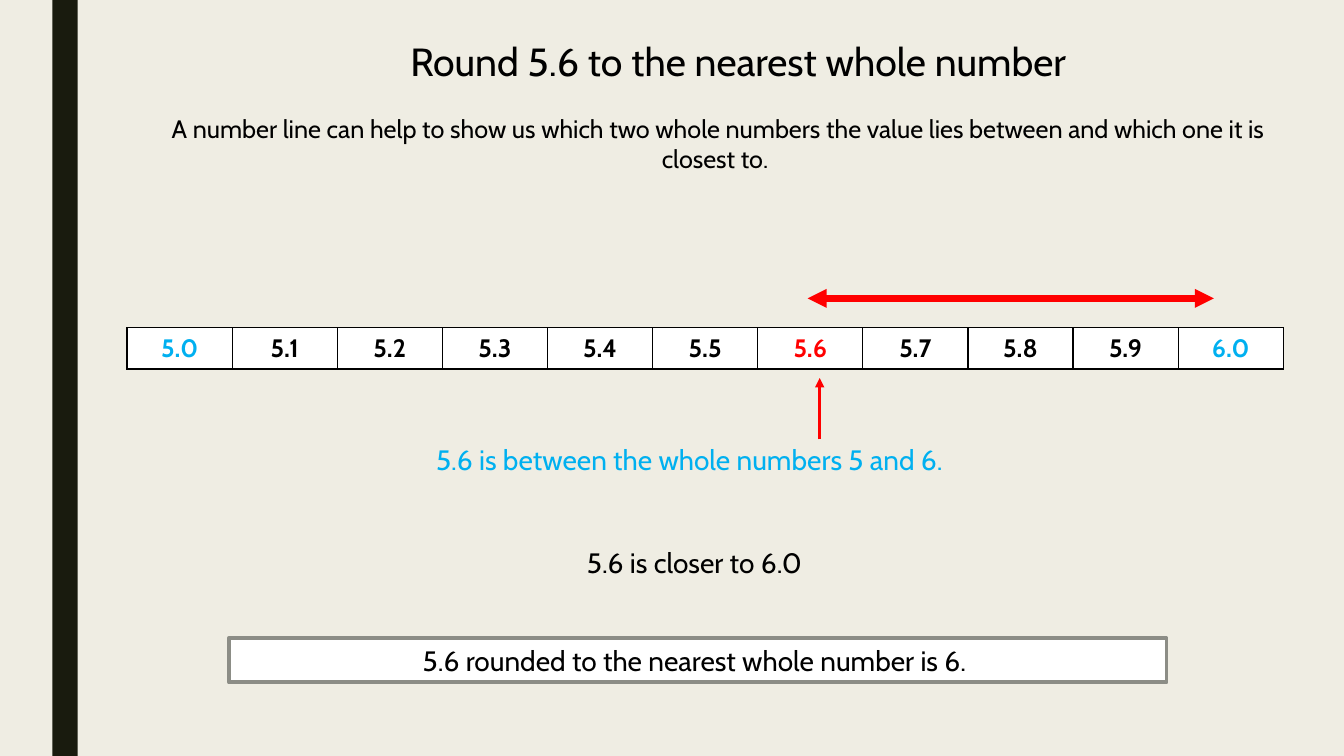
import pptx
import pptx.util
import pptx.dml.color
import pptx.enum.shapes
import pptx.enum.text
import pptx.oxml
import pptx.oxml.ns
import lxml.etree

Inches = pptx.util.Inches
Pt = pptx.util.Pt
FONT = "Cabin"
BLACK, BLUE, RED, WHITE = "000000", "00B0F0", "FF0000", "FFFFFF"

# Content: text, (left, top, width, height), size, colour, wrap
TEXTS = [
    ("Round 5.6 to the nearest whole number", (3.92, 0.32, 6.8, 0.57), 28, BLACK, False),
    ("A number line can help to show us which two whole numbers the value lies "
     "between and which one it is closest to. ", (1.26, 1.07, 11.72, 0.71), 18, BLACK, True),
    ("5.6 is between the whole numbers 5 and 6. ", (2.22, 4.34, 9.3, 0.44), 20, BLUE, True),
    ("5.6 is closer to 6.0 ", (2.27, 5.36, 9.3, 0.44), 20, BLACK, True),
]
ANSWER = ("5.6 rounded to the nearest whole number is 6. ", (2.27, 6.33, 9.3, 0.44))
NUMBERS = [f"{50 + step}"[0] + "." + f"{50 + step}"[1] for step in range(11)]
NUMBER_COLOURS = {"5.0": BLUE, "5.6": RED, "6.0": BLUE}
LINE_PLACE = (1.26, 3.25, 11.47, 0.41)
# Arrows: start, end, width, ends that carry a head
ARROWS = [
    ((8.13, 4.36), (8.13, 3.75), 2.25, ["tailEnd"]),
    ((8.01, 2.96), (12.04, 2.96), 4.5, ["headEnd", "tailEnd"]),
]


def colour(value):
    return pptx.dml.color.RGBColor.from_string(value)


def inches(values):
    return [Inches(value) for value in values]


def paint(fill, value):
    fill.solid()
    fill.fore_color.rgb = colour(value)


def write(frame, text, size, value, bold=False):
    para = frame.paragraphs[0]
    para.alignment = pptx.enum.text.PP_ALIGN.CENTER
    span = para.add_run()
    span.text = text
    for name, setting in {"name": FONT, "size": Pt(size), "bold": bold}.items():
        setattr(span.font, name, setting)
    span.font.color.rgb = colour(value)


def add_rectangle(page, place, fill):
    box = page.shapes.add_shape(pptx.enum.shapes.MSO_SHAPE.RECTANGLE, *inches(place))
    box.shadow.inherit = False
    paint(box.fill, fill)
    box.line.fill.background()
    return box


def add_number_line(page):
    table_frame = page.shapes.add_table(1, len(NUMBERS), *inches(LINE_PLACE))
    table = table_frame.table
    table.first_row = table.horz_banding = False
    for column, number in enumerate(NUMBERS):
        table.columns[column].width = Inches(LINE_PLACE[2] / len(NUMBERS))
        cell = table.cell(0, column)
        write(cell.text_frame, number, 18, NUMBER_COLOURS.get(number, BLACK), True)
        # Borders come before the fill in the cell properties
        properties = cell._tc.get_or_add_tcPr()
        for side in ("lnL", "lnR", "lnT", "lnB"):
            properties.append(pptx.oxml.parse_xml(
                f'<a:{side} {pptx.oxml.ns.nsdecls("a")} w="{Pt(1)}"><a:solidFill>'
                f'<a:srgbClr val="{BLACK}"/></a:solidFill></a:{side}>'))
        paint(cell.fill, WHITE)


def add_arrow(page, start, end, width, heads):
    arrow = page.shapes.add_connector(
        pptx.enum.shapes.MSO_CONNECTOR.STRAIGHT, *inches(start + end))
    arrow.line.color.rgb = colour(RED)
    arrow.line.width = Pt(width)
    outline = arrow.line._get_or_add_ln()
    for head in heads:
        lxml.etree.SubElement(outline, pptx.oxml.ns.qn(f"a:{head}"), type="triangle")
    lxml.etree.SubElement(arrow._element.spPr, pptx.oxml.ns.qn("a:effectLst"))


def main():
    deck = pptx.Presentation()
    deck.slide_width, deck.slide_height = inches((13.33, 7.5))
    page = deck.slides.add_slide(deck.slide_layouts[6])
    paint(page.background.fill, "EFEDE3")

    # Side bar
    add_rectangle(page, (0.52, 0, 0.25, 7.5), "191B0E")

    # Title and explanations
    for text, place, size, value, wrap in TEXTS:
        box = page.shapes.add_textbox(*inches(place))
        box.text_frame.word_wrap = wrap
        write(box.text_frame, text, size, value)

    # Number line with its arrows
    add_number_line(page)
    for arrow in ARROWS:
        add_arrow(page, *arrow)

    # Answer
    text, place = ANSWER
    box = add_rectangle(page, place, WHITE)
    box.line.color.rgb = colour("8C8D86")
    box.line.width = Pt(2.75)
    box.text_frame.word_wrap = True
    write(box.text_frame, text, 20, BLACK)

    deck.save("out.pptx")


if __name__ == "__main__":
    main()
